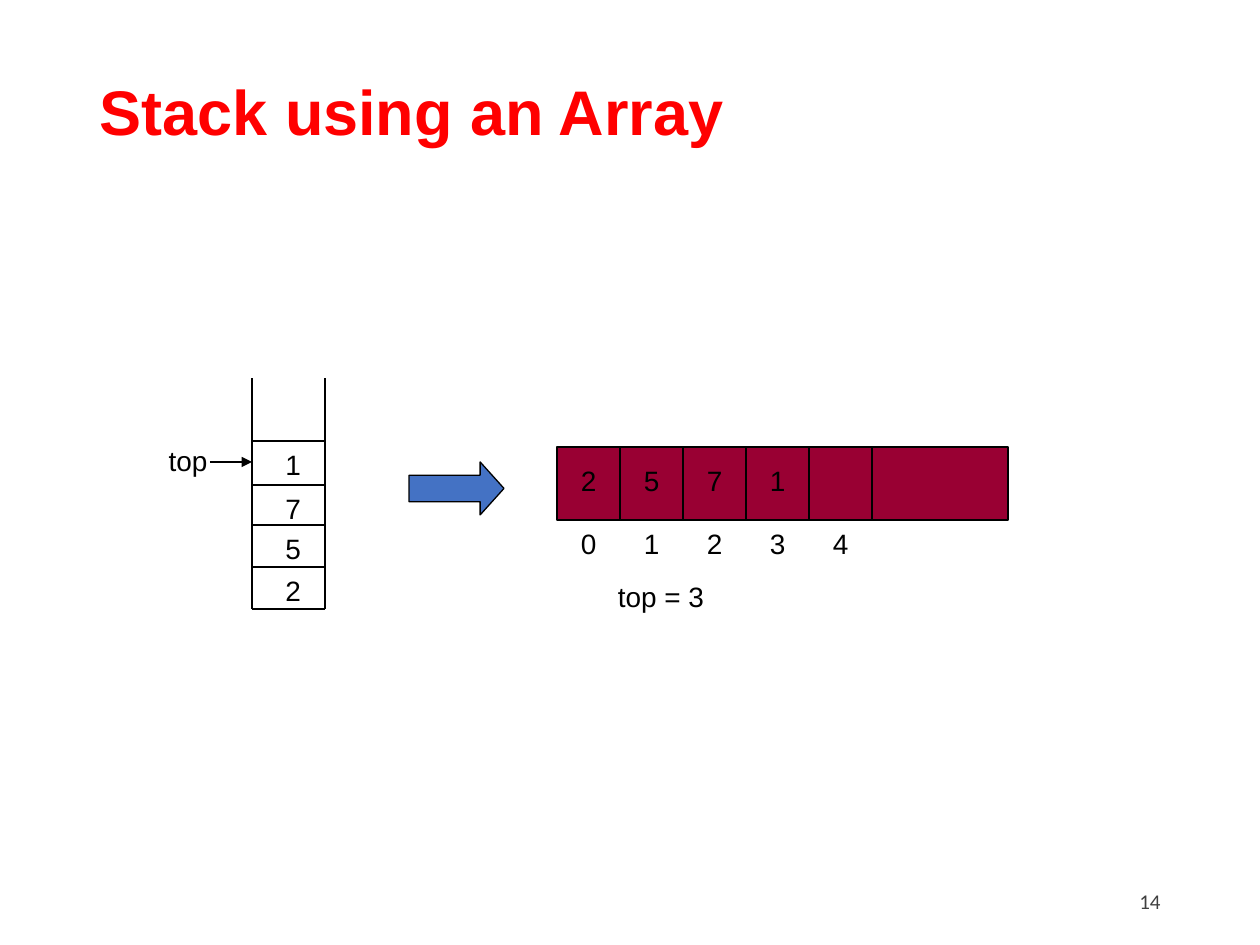
from lxml.etree import SubElement
from pptx import Presentation
from pptx.dml.color import RGBColor
from pptx.enum.shapes import MSO_CONNECTOR, MSO_SHAPE
from pptx.enum.text import MSO_ANCHOR as ANCHOR, MSO_AUTO_SIZE as AUTO, PP_ALIGN as ALIGN
from pptx.oxml.ns import qn
from pptx.util import Pt

# Content
TITLE = "Stack using an Array"
STACK = ["1", "7", "5", "2"]  # from the top down
ARRAY = STACK[::-1]
INDEXES = ["0", "1", "2", "3", "4"]
PAGE_NUMBER = "14"

# Layout in px
STACK_LEFT, STACK_RIGHT, STACK_TOP = 252, 325, 378
LEVELS = [441, 485, 525, 567, 609]  # lines between stack items
ARRAY_LEFT, ARRAY_TOP, ARRAY_WIDTH, ARRAY_HEIGHT, CELL = 557, 447, 451, 73, 63
LABEL_WIDTH, LABEL_HEIGHT = 40, 46
POINTER_Y = 462

BLACK, RED, MAROON, BLUE, GREY = "000000", "FF0000", "990033", "4472C4", "404040"


def px(value):
    return round(value * 914400 / 126)


def box(*lengths):
    return [px(length) for length in lengths]


def color(hex_code):
    return RGBColor.from_string(hex_code)


def write(frame, text, size=16, font="Arial", ink=BLACK, bold=False,
          align=ALIGN.CENTER, anchor=ANCHOR.TOP, spacing=None):
    frame.vertical_anchor = anchor
    paragraph = frame.paragraphs[0]
    paragraph.alignment = align
    paragraph.line_spacing = spacing
    run = paragraph.add_run()
    run.text = text
    run.font.size, run.font.name, run.font.bold = Pt(size), font, bold
    run.font.color.rgb = color(ink)


def add_label(text, center, top, width=LABEL_WIDTH):
    frame = slide.shapes.add_textbox(
        *box(center - width / 2, top, width, LABEL_HEIGHT)).text_frame
    frame.word_wrap = False
    frame.auto_size = AUTO.SHAPE_TO_FIT_TEXT
    write(frame, text)


def add_line(x1, y1, x2, y2, arrow=False):
    line = slide.shapes.add_connector(MSO_CONNECTOR.STRAIGHT, *box(x1, y1, x2, y2))
    line.line.color.rgb = color(BLACK)
    line.line.width = Pt(0.75)
    if arrow:
        SubElement(line.line._get_or_add_ln(), qn("a:tailEnd"), type="triangle")
    SubElement(line._element.spPr, qn("a:effectLst"))


def add_block(kind, fill, *place):
    block = slide.shapes.add_shape(kind, *box(*place))
    block.shadow.inherit = False
    block.fill.solid()
    block.fill.fore_color.rgb = color(fill)
    block.line.color.rgb = color(BLACK)
    block.line.width = Pt(0.75)
    return block


deck = Presentation()
deck.slide_width, deck.slide_height = box(1260, 945)
slide = deck.slides.add_slide(deck.slide_layouts[5])

# Title
title = slide.shapes.title
title.left, title.top, title.width, title.height = box(87, 65, 1086, 100)
write(title.text_frame, TITLE, size=36, ink=RED, bold=True,
      align=ALIGN.LEFT, anchor=ANCHOR.MIDDLE, spacing=0.9)

# Stack: open at the top, one line per level
for x in (STACK_LEFT, STACK_RIGHT):
    add_line(x, STACK_TOP, x, LEVELS[-1])
for y in LEVELS:
    add_line(STACK_LEFT, y, STACK_RIGHT, y)
for item, y in zip(STACK, LEVELS):
    add_label(item, 293, y)

# Pointer to the top of the stack
add_label("top", 188, 437, width=64)
add_line(210, POINTER_Y, STACK_LEFT, POINTER_Y, arrow=True)

# Arrow from stack to array
stack_to_array = add_block(MSO_SHAPE.RIGHT_ARROW, BLUE, 409, 462, 95, 53)
stack_to_array.adjustments[1] = 0.45

# Array with dividers, values and indexes
add_block(MSO_SHAPE.RECTANGLE, MAROON, ARRAY_LEFT, ARRAY_TOP, ARRAY_WIDTH, ARRAY_HEIGHT)
array_bottom = ARRAY_TOP + ARRAY_HEIGHT
for cell in range(len(INDEXES)):
    x = ARRAY_LEFT + CELL * (cell + 1)
    add_line(x, ARRAY_TOP, x, array_bottom)
for row, top in ((ARRAY, 457), (INDEXES, array_bottom)):
    for cell, text in enumerate(row):
        add_label(text, ARRAY_LEFT + CELL * (cell + 0.5), top)
add_label("top = 3", 661, 573, width=112)

# Page number
page = slide.shapes.add_textbox(*box(890, 876, 283, 50)).text_frame
page.word_wrap = True
write(page, PAGE_NUMBER, size=12, font="Calibri", ink=GREY,
      align=ALIGN.RIGHT, anchor=ANCHOR.MIDDLE)

deck.save("out.pptx")
